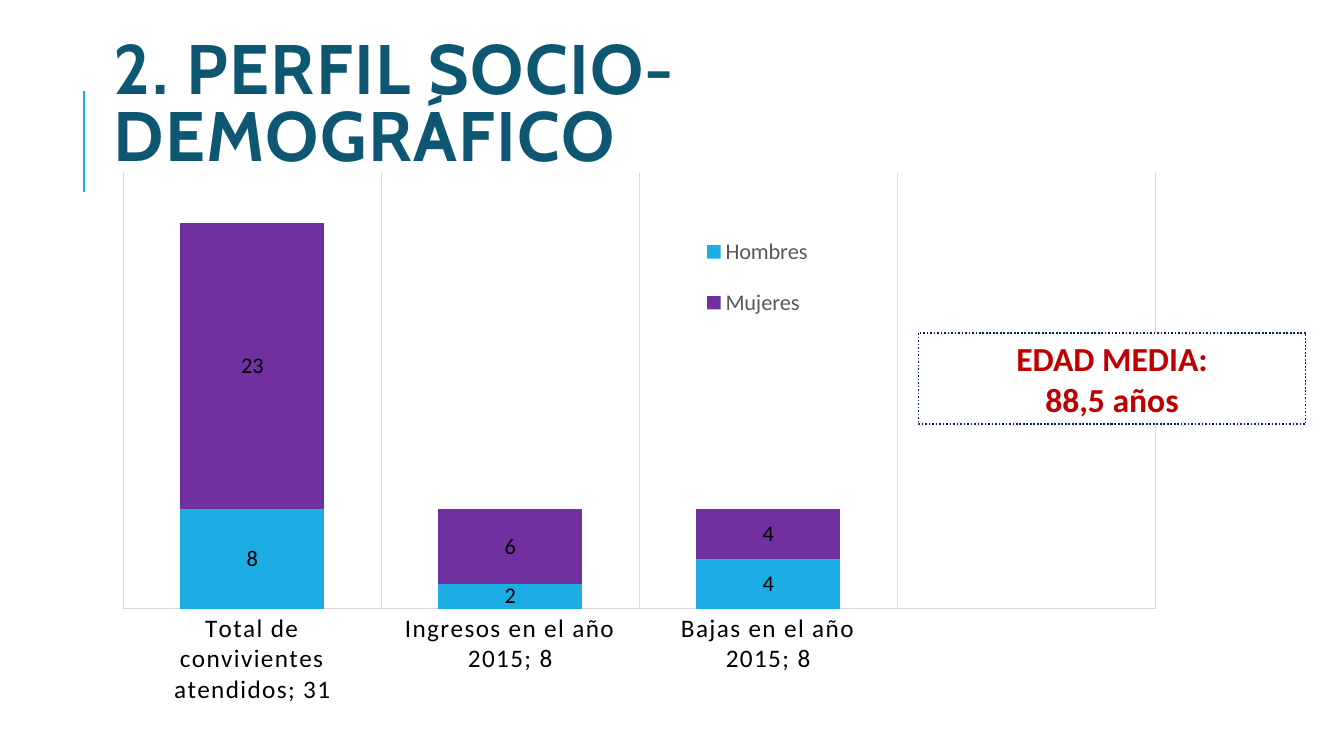
from lxml.etree import SubElement, fromstring
from pptx import Presentation
from pptx.chart.data import CategoryChartData as Data
from pptx.dml.color import RGBColor as RGB
from pptx.enum.chart import XL_CHART_TYPE as Kind, XL_LABEL_POSITION as Spot
from pptx.enum.chart import XL_LEGEND_POSITION as Side, XL_TICK_MARK as Tick
from pptx.enum.dml import MSO_LINE as Dash
from pptx.enum.shapes import MSO_CONNECTOR as Link, MSO_SHAPE as Shape
from pptx.enum.text import MSO_ANCHOR as Anchor, MSO_AUTO_SIZE as Fit, PP_ALIGN as Align
from pptx.oxml.ns import qn
from pptx.util import Inches, Pt

COLORS = {
    "blue": "1CADE4", "purple": "7030A0", "teal": "0E5772", "navy": "002060",
    "red": "C00000", "gray": "595959", "pale": "D9D9D9", "black": "000000",
    "white": "FFFFFF",
}
CHART_NS = "http://schemas.openxmlformats.org/drawingml/2006/chart"


class Deck:
    """Holds the style and the current slide, and draws each kind of element."""

    def __init__(self):
        self.show = Presentation()
        self.show.slide_width, self.show.slide_height = Inches(13.33), Inches(7.5)
        self.slide = self.show.slides.add_slide(self.show.slide_layouts[6])
        self.shapes = self.slide.shapes

    def color(self, name):
        return RGB.from_string(COLORS[name])

    def font(self, font, size, name, face="Calibri", bold=False):
        font.size, font.name, font.bold = Pt(size), face, bold
        font.color.rgb = self.color(name)

    def stroke(self, line, name, width):
        line.color.rgb = self.color(name)
        line.width = Pt(width)

    def rule(self, x, top, end):
        rule = self.shapes.add_connector(
            Link.STRAIGHT, Inches(x), Inches(top), Inches(x), Inches(end))
        self.stroke(rule.line, "blue", 1.5)
        SubElement(rule._element.spPr, qn("a:effectLst"))

    def title(self, text, *box):
        frame = self.shapes.add_textbox(*map(Inches, box)).text_frame
        frame.word_wrap = True
        frame.vertical_anchor = Anchor.MIDDLE
        para = frame.paragraphs[0]
        run = para.add_run()
        run.text = text
        para.line_spacing = 0.8
        self.font(para.font, 50, "teal", "Cabin", True)
        run.font._element.set("spc", "100")

    def note(self, lines, *box):
        note = self.shapes.add_shape(Shape.RECTANGLE, *map(Inches, box))
        note.shadow.inherit = False
        note.fill.solid()
        note.fill.fore_color.rgb = self.color("white")
        self.stroke(note.line, "navy", 1.25)
        note.line.dash_style = Dash.ROUND_DOT
        frame = note.text_frame
        frame.word_wrap = True
        frame.auto_size = Fit.SHAPE_TO_FIT_TEXT
        frame.text = "\n".join(lines)
        for para in frame.paragraphs:
            para.alignment = Align.CENTER
            self.font(para.font, 24, "red", bold=True)

    def place(self, part, index, inner, **box):
        for old in part.findall(qn("c:layout")):
            part.remove(old)
        target = '<c:layoutTarget val="inner"/>' if inner else ""
        modes = "".join(f'<c:{key}Mode val="edge"/>' for key in "xy")
        sizes = "".join(f'<c:{key} val="{val}"/>' for key, val in box.items())
        part.insert(index, fromstring(
            f'<c:layout xmlns:c="{CHART_NS}"><c:manualLayout>'
            f"{target}{modes}{sizes}</c:manualLayout></c:layout>"))

    def chart(self, cats, series, *box):
        data = Data()
        data.categories = cats
        for name, vals, _ in series:
            data.add_series(name, vals)
        chart = self.shapes.add_chart(
            Kind.COLUMN_STACKED, *map(Inches, box), data).chart
        self.font(chart.font, 10, "black")
        chart.has_title = False
        plot = chart.plots[0]
        plot.gap_width, plot.overlap = 79, 100
        plot.vary_by_categories = False
        for item, (_, _, tone) in zip(plot.series, series):
            item.format.fill.solid()
            item.format.fill.fore_color.rgb = self.color(tone)
            labels = item.data_labels
            labels.show_value = True
            labels.position = Spot.CENTER
            self.font(labels.font, 16, "black")
        self.axes(chart)
        self.legend(chart)
        area = chart._chartSpace.chart.plotArea
        self.place(area, 0, True, x=0.02, y=0.09, w=0.96, h=0.73)

    def axes(self, chart):
        scale = chart.value_axis
        scale.minimum_scale, scale.maximum_scale = 0, 35
        scale.has_major_gridlines = False
        scale.visible = False
        axis = chart.category_axis
        axis.major_tick_mark = axis.minor_tick_mark = Tick.NONE
        axis.has_major_gridlines = True
        for line in (axis.format.line, axis.major_gridlines.format.line):
            self.stroke(line, "pale", 0.75)
        font = axis.tick_labels.font
        self.font(font, 18, "black")
        font._element.set("spc", "100")

    def legend(self, chart):
        chart.has_legend = True
        legend = chart.legend
        legend.position = Side.TOP
        legend.include_in_layout = False
        self.font(legend.font, 16, "gray")
        self.place(legend._element, 1, False, x=0.55, y=0.16, w=0.12, h=0.21)


def main():
    deck = Deck()
    deck.rule(0.83, 1.9, 0.9)
    deck.title("2. PERFIL SOCIO-DEMOGRÁFICO", 1.03, 0.25, 10.63, 1.64)
    cats = ["Total de convivientes atendidos; 31", "Ingresos en el año 2015; 8",
            "Bajas en el año 2015; 8", ""]
    series = [("Hombres", (8, 2, 4, None), "blue"),
              ("Mujeres", (23, 6, 4, None), "purple")]
    deck.chart(cats, series, 1.01, 1.18, 10.66, 5.93)
    deck.note(["EDAD MEDIA:", "88,5 años"], 9.11, 3.3, 3.84, 0.91)
    deck.show.save("out.pptx")


if __name__ == "__main__":
    main()
